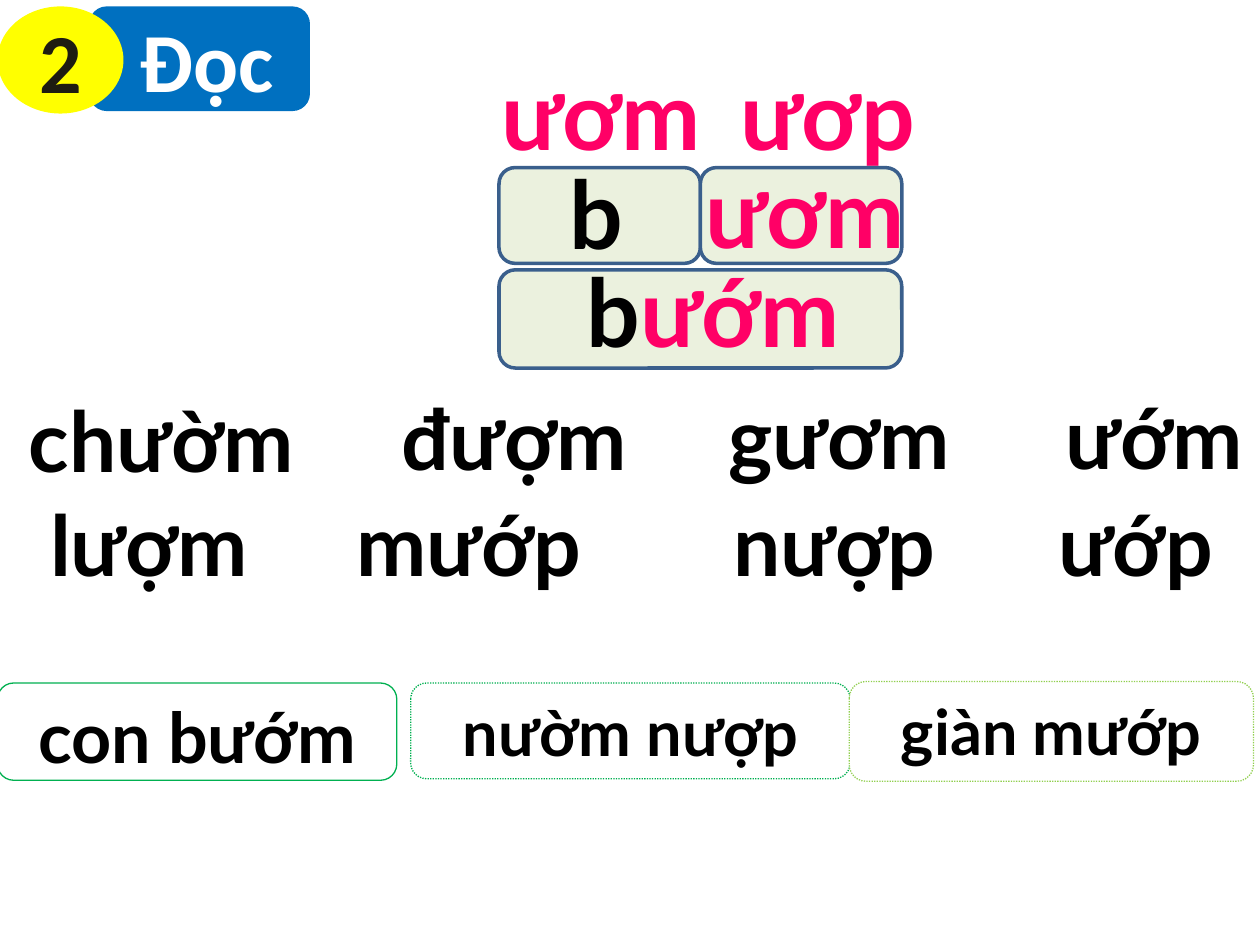
from dataclasses import dataclass
from typing import NamedTuple, Optional

from pptx import Presentation
from pptx.dml.color import RGBColor as Rgb
from pptx.enum.dml import MSO_LINE as Dash
from pptx.enum.shapes import MSO_SHAPE as Kind
from pptx.enum.text import MSO_ANCHOR as Anchor, MSO_AUTO_SIZE as Fit, PP_ALIGN as Align
from pptx.util import Cm, Pt


@dataclass(frozen=True)
class Theme:
    head: str = "Calibri"
    body: str = "Lato"
    white: str = "FFFFFF"
    black: str = "000000"
    ink: str = "1E1C11"
    blue: str = "0070C0"
    yellow: str = "FFFF00"
    pink: str = "FF0066"
    pale: str = "EBF1DE"
    navy: str = "3A5F8C"
    green: str = "00B050"
    lime: str = "92D050"
    title: int = 48
    word: int = 48
    sound: int = 54
    gap: int = 88
    large: int = 40
    small: int = 36


T = Theme()


class Box(NamedTuple):
    """Left, top, width and height in centimetres."""
    x: float
    y: float
    w: float
    h: float

    def place(self) -> list:
        return [Cm(v) for v in self]


class Bit(NamedTuple):
    text: str
    size: int
    color: str
    font: str = T.body


class Edge(NamedTuple):
    color: str
    width: float
    dash: Optional[Dash] = None


class Panel(NamedTuple):
    box: Box
    fill: str
    edge: Optional[Edge] = None
    bits: tuple = ()
    kind: Kind = Kind.ROUNDED_RECTANGLE
    anchor: Anchor = Anchor.MIDDLE


class Label(NamedTuple):
    box: Box
    bits: tuple
    wrap: bool = False


def write(frame, bits: tuple, align: Align) -> None:
    para = frame.paragraphs[0]
    para.alignment = align
    for bit in bits:
        run = para.add_run()
        run.text = bit.text
        font = run.font
        font.name, font.size, font.bold = bit.font, Pt(bit.size), True
        font.color.rgb = Rgb.from_string(bit.color)


def draw_panel(shapes, item: Panel) -> None:
    shape = shapes.add_shape(item.kind, *item.box.place())
    shape.shadow.inherit = False
    shape.fill.solid()
    shape.fill.fore_color.rgb = Rgb.from_string(item.fill)
    if item.edge:
        shape.line.color.rgb = Rgb.from_string(item.edge.color)
        shape.line.width = Pt(item.edge.width)
        if item.edge.dash:
            shape.line.dash_style = item.edge.dash
    else:
        shape.line.fill.background()
    shape.text_frame.vertical_anchor = item.anchor
    write(shape.text_frame, item.bits, Align.CENTER)


def draw_label(shapes, item: Label) -> None:
    frame = shapes.add_textbox(*item.box.place()).text_frame
    frame.word_wrap = item.wrap
    frame.auto_size = Fit.SHAPE_TO_FIT_TEXT
    write(frame, item.bits, Align.LEFT)


def sound(x: float, y: float, w: float, *parts: tuple) -> Label:
    """Large letters; the tall closing space sets the line height."""
    bits = tuple(Bit(text, T.sound, color) for text, color in parts)
    return Label(Box(x, y, w, 4.01), bits + (Bit(" ", T.gap, T.pink),))


def word(text: str, x: float, y: float, w: float, h: float) -> Label:
    return Label(Box(x, y, w, h), (Bit(text, T.word, T.black),), True)


def phrase(text: str, size: int, box: Box, edge: Edge) -> Panel:
    return Panel(box, T.white, edge, (Bit(text, size, T.black),), anchor=Anchor.TOP)


# Heading
HEAD = (
    Panel(Box(1.8, 0.13, 4.45, 2.11), T.blue,
          bits=(Bit(" ", T.small, T.white, T.head), Bit("Đọc", T.title, T.white, T.head))),
    Panel(Box(-0.05, 0.13, 2.54, 2.16), T.yellow,
          bits=(Bit("2", T.title, T.ink, T.head),), kind=Kind.OVAL),
)

# Sounds and the spelling frame
RHYMES = (
    sound(9.86, -0.2, 5.11, ("ươm", T.pink)),
    sound(14.68, -0.2, 4.57, ("ươp", T.pink)),
)
LEFT, HALF = 10.06, 4.06
RIM = Edge(T.navy, 2)
CELLS = (
    Panel(Box(LEFT, 3.38, HALF, 1.93), T.pale, RIM),
    Panel(Box(LEFT + HALF, 3.38, HALF, 1.93), T.pale, RIM),
    Panel(Box(LEFT, 5.44, 2 * HALF, 1.98), T.pale, RIM),
)
SPELL = (
    sound(13.97, 1.78, 5.11, ("ươm", T.pink)),
    sound(11.23, 1.8, 2.36, ("b", T.black)),
    sound(11.58, 3.78, 6.2, ("b", T.black), ("ướm", T.pink)),
)

# Words to read
WORDS = (
    word("chườm", 0.33, 7.7, 7.54, 1.4),
    word("đượm", 7.85, 7.67, 6.55, 1.4),
    word("gươm", 14.43, 7.65, 6.55, 1.4),
    word("ướm", 21.23, 7.65, 6.55, 1.4),
    word("lượm", 0.76, 9.8, 7.44, 1.4),
    word("nượp", 14.53, 9.8, 6.55, 2.31),
    word("ướp", 21.08, 9.8, 6.55, 2.31),
    word("mướp", 6.93, 9.8, 6.55, 2.31),
)

# Phrases
DOT = Dash.ROUND_DOT  # written to the file as sysDot
PHRASES = (
    phrase("con bướm", T.large, Box(-0.05, 13.77, 8.05, 1.96), Edge(T.green, 0.75)),
    phrase("nườm nượp", T.small, Box(8.28, 13.77, 8.86, 1.93), Edge(T.green, 0.75, DOT)),
    phrase("giàn mướp", T.small, Box(17.12, 13.74, 8.15, 2.01), Edge(T.lime, 0.75, DOT)),
)


def main() -> None:
    deck = Presentation()
    deck.slide_width, deck.slide_height = Cm(25.4), Cm(19.05)
    shapes = deck.slides.add_slide(deck.slide_layouts[6]).shapes
    for item in HEAD + RHYMES + CELLS + SPELL + WORDS + PHRASES:
        draw = draw_panel if isinstance(item, Panel) else draw_label
        draw(shapes, item)
    deck.save("out.pptx")


if __name__ == "__main__":
    main()
